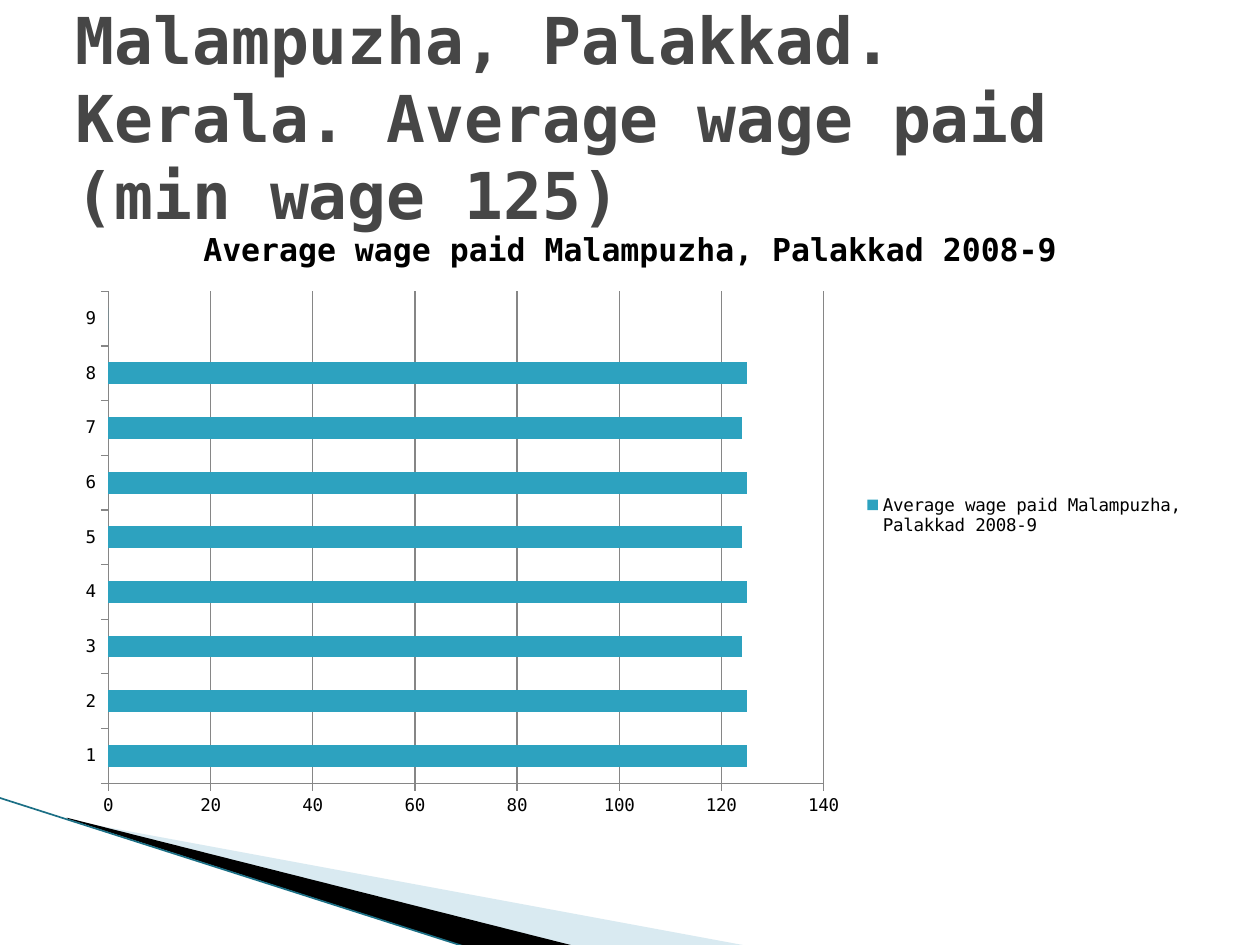
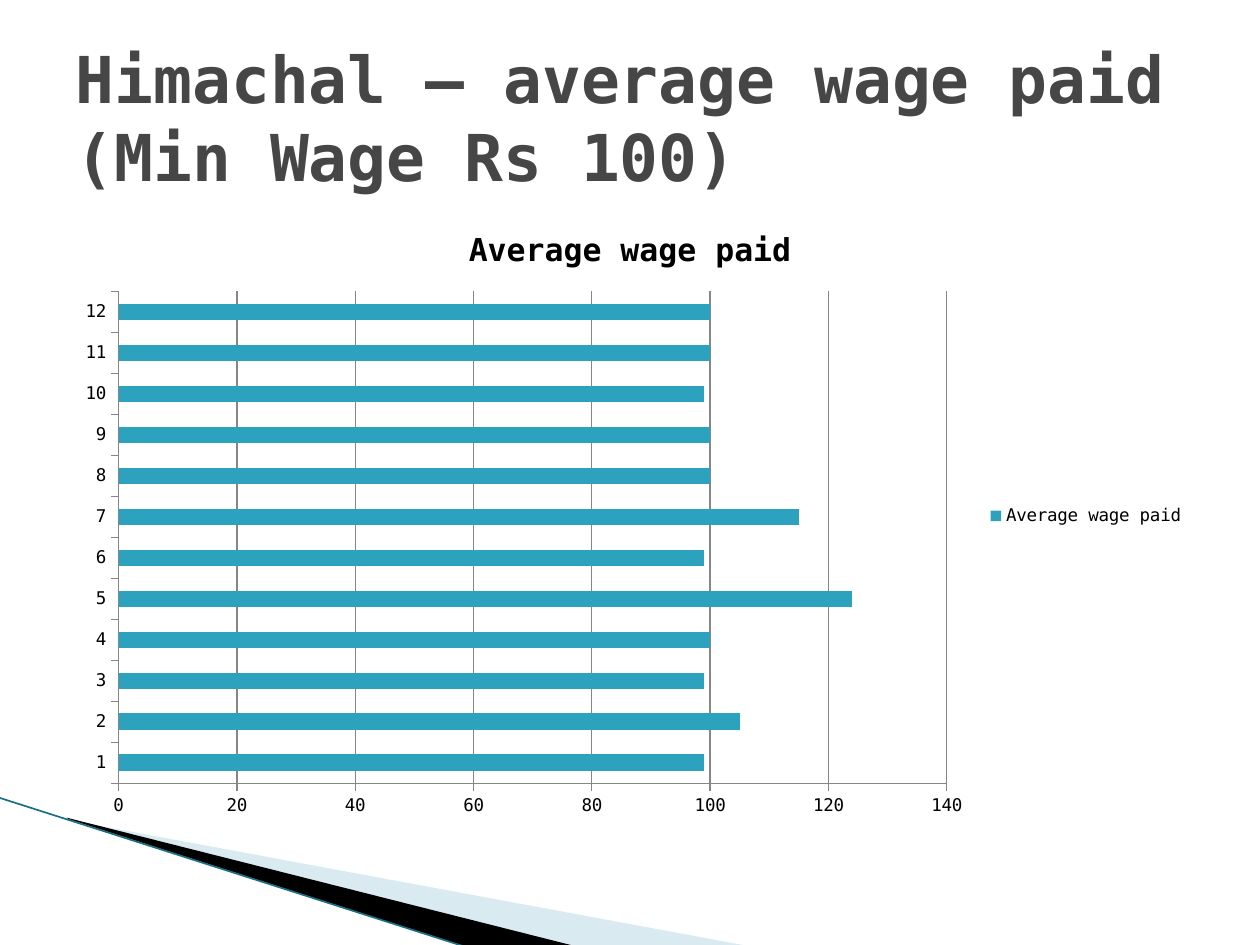
from lxml.etree import SubElement
from pptx import Presentation
from pptx.chart.data import CategoryChartData
from pptx.dml.color import RGBColor
from pptx.enum.chart import XL_CHART_TYPE, XL_LEGEND_POSITION, XL_TICK_MARK
from pptx.enum.shapes import MSO_CONNECTOR
from pptx.enum.text import MSO_ANCHOR, MSO_AUTO_SIZE, PP_ALIGN
from pptx.oxml.ns import qn
from pptx.util import Inches, Pt

FONT = "DejaVu Sans Mono"
COLORS = {
    "background": "FFFFFF",
    "title": "464646",
    "text": "000000",
    "bar": "2DA2BF",
    "axis": "868686",
    "pale band": "A0CBDC",
    "dark band": "000000",
    "edge": "1B6F85",
}
MARGIN, CONTENT_WIDTH = 0.5, 9
PALE_BAND = [(0.55, 6.51), (5.95, 7.51), (4.56, 7.51), (0.55, 6.5)]
PALE_FRAME = (0.78, 5.47, 4.16, 1.58)
DARK_BAND = [(0.53, 6.49), (4.57, 7.51), (3.72, 7.52), (0.54, 6.5)]
DARK_FRAME = (-0.06, 6.33, 4.16, 0.92)
EDGE = [(-0.01, 6.33), (3.71, 7.52)]

WAGE_SLIDES = [
    ("Malampuzha, Palakkad. Kerala. Average wage paid (min wage 125)",
     "Average wage paid Malampuzha, Palakkad 2008-9",
     [125, 125, 124, 125, 124, 125, 124, 125, 0]),
    ("Himachal – average wage paid (Min Wage Rs 100)",
     "Average wage paid",
     [99, 105, 99, 100, 124, 99, 115, 100, 100, 99, 100, 100]),
]


def color(name):
    return RGBColor.from_string(COLORS[name])


def style_font(font, size, color_name, bold=False):
    font.name = FONT
    font.size = Pt(size)
    font.bold = bold
    font.color.rgb = color(color_name)


def set_frame(band, frame):
    """Give a freeform a new frame while its outline stays in place."""
    left, top, width, height = [Inches(length) for length in frame]
    shift_x, shift_y = band.left - left, band.top - top
    outline = band._element.spPr.find(".//" + qn("a:path"))
    outline.set("w", str(width))
    outline.set("h", str(height))
    for point in outline.iter(qn("a:pt")):
        point.set("x", str(int(point.get("x")) + shift_x))
        point.set("y", str(int(point.get("y")) + shift_y))
    band.left, band.top, band.width, band.height = left, top, width, height


def add_band(page, points, frame, color_name, opacity=100):
    corners = [(Inches(x), Inches(y)) for x, y in points]
    builder = page.shapes.build_freeform(*corners[0])
    builder.add_line_segments(corners[1:], close=True)
    band = builder.convert_to_shape()
    set_frame(band, frame)
    band.shadow.inherit = False
    band.fill.solid()
    band.fill.fore_color.rgb = color(color_name)
    band.line.fill.background()
    if opacity < 100:
        hue = band._element.spPr.find(".//" + qn("a:srgbClr"))
        SubElement(hue, qn("a:alpha"), val=str(opacity * 1000))


def add_corner_sweep(page):
    """Draw the bands and edge line that cross the lower left corner."""
    add_band(page, PALE_BAND, PALE_FRAME, "pale band", 40)
    add_band(page, DARK_BAND, DARK_FRAME, "dark band")
    ends = [Inches(length) for point in EDGE for length in point]
    edge = page.shapes.add_connector(MSO_CONNECTOR.STRAIGHT, *ends)
    edge.line.color.rgb = color("edge")
    edge.line.width = Pt(0.95)
    SubElement(edge._element.spPr, qn("a:effectLst"))


def set_title(page, text):
    title = page.shapes.title
    title.left, title.top = Inches(MARGIN), Inches(0.3)
    title.width, title.height = Inches(CONTENT_WIDTH), Inches(1.25)
    frame = title.text_frame
    frame.word_wrap = True
    frame.auto_size = MSO_AUTO_SIZE.NONE
    frame.vertical_anchor = MSO_ANCHOR.MIDDLE
    para = frame.paragraphs[0]
    para.alignment = PP_ALIGN.LEFT
    span = para.add_run()
    span.text = text
    style_font(span.font, 36.9, "title", bold=True)


def style_axis(axis, gridlines):
    axis.major_tick_mark = XL_TICK_MARK.OUTSIDE
    axis.minor_tick_mark = XL_TICK_MARK.NONE
    axis.has_major_gridlines = gridlines
    lines = [axis.format.line]
    if gridlines:
        lines.append(axis.major_gridlines.format.line)
    for line in lines:
        line.color.rgb = color("axis")
        line.width = Pt(0.75)


def add_wage_chart(page, name, wages):
    data = CategoryChartData()
    data.categories = [str(number) for number in range(1, len(wages) + 1)]
    data.add_series(name, wages)
    chart = page.shapes.add_chart(
        XL_CHART_TYPE.BAR_CLUSTERED, Inches(MARGIN), Inches(1.62),
        Inches(CONTENT_WIDTH), Inches(4.95), data).chart
    style_font(chart.font, 10, "text")

    chart.has_title = True
    chart.chart_title.include_in_layout = False
    span = chart.chart_title.text_frame.paragraphs[0].add_run()
    span.text = name
    style_font(span.font, 18, "text", bold=True)

    chart.has_legend = True
    chart.legend.position = XL_LEGEND_POSITION.RIGHT
    chart.legend.include_in_layout = False

    style_axis(chart.category_axis, gridlines=False)
    style_axis(chart.value_axis, gridlines=True)
    plot = chart.plots[0]
    plot.vary_by_categories = False
    plot.gap_width = 150
    fill = plot.series[0].format.fill
    fill.solid()
    fill.fore_color.rgb = color("bar")


def main():
    deck = Presentation()
    deck.slide_width, deck.slide_height = Inches(10), Inches(7.5)
    background = deck.slide_master.background.fill
    background.solid()
    background.fore_color.rgb = color("background")
    title_only = deck.slide_layouts[5]
    for title, chart_name, wages in WAGE_SLIDES:
        page = deck.slides.add_slide(title_only)
        add_corner_sweep(page)
        add_wage_chart(page, chart_name, wages)
        set_title(page, title)
    deck.save("out.pptx")


if __name__ == "__main__":
    main()
